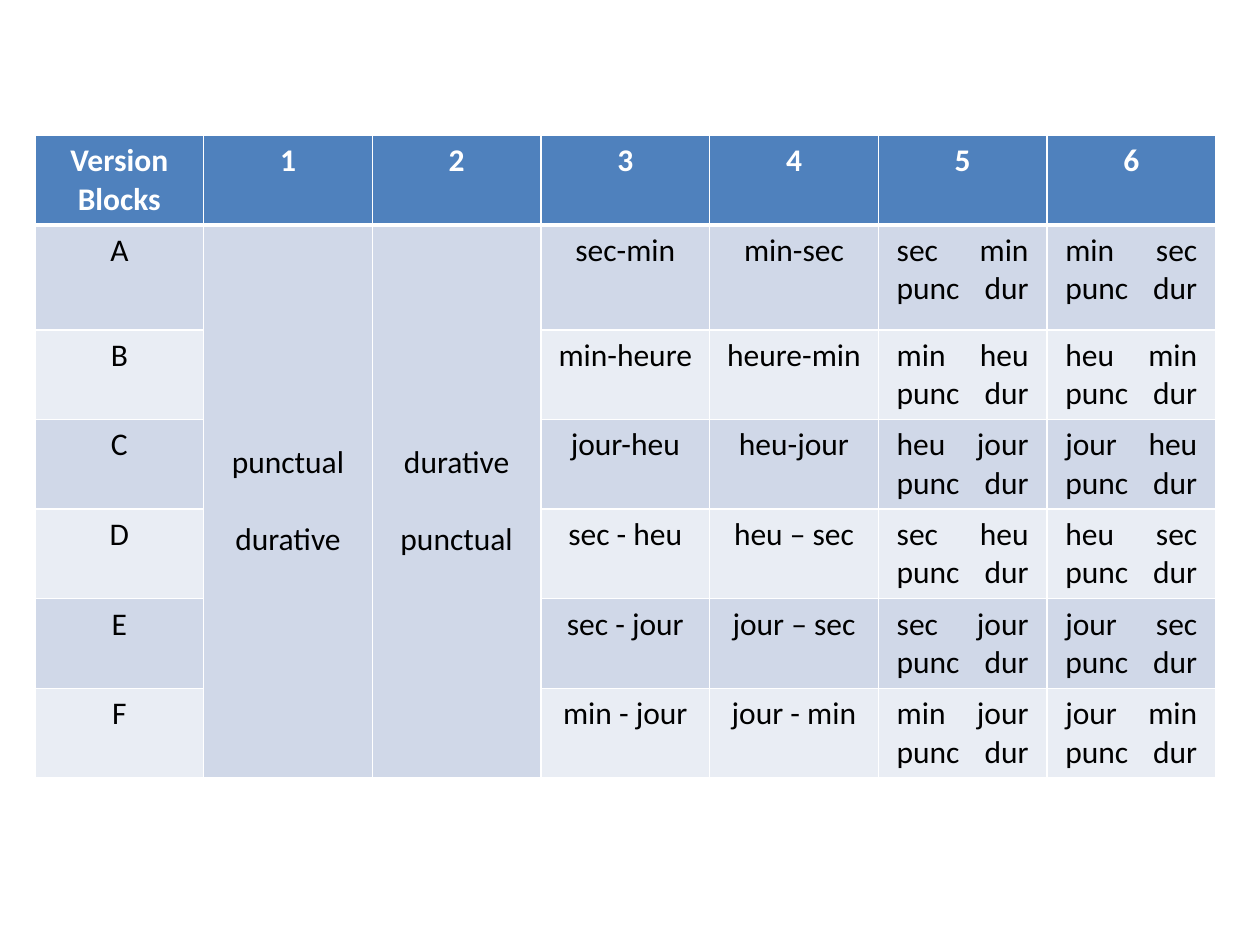
from dataclasses import dataclass

from lxml.etree import SubElement
from pptx import Presentation
from pptx.dml.color import RGBColor as Rgb
from pptx.enum.text import MSO_ANCHOR as Anchor, PP_ALIGN as Align
from pptx.oxml.ns import qn
from pptx.util import Pt


@dataclass(frozen=True)
class Theme:
    font: str = "Calibri"
    size: float = 18
    white: str = "FFFFFF"
    black: str = "000000"
    header: str = "4F81BD"
    bands: tuple = ("D0D8E8", "E9EDF4")
    rule: float = 1
    header_rule: float = 3


THEME = Theme()

VERSIONS = ["Version\vBlocks", "1", "2", "3", "4", "5", "6"]
ORDERS = ["punctual\ndurative", "durative\npunctual"]
BLOCKS = [
    ("A", "sec-min", "min-sec", "sec\tmin", "min\tsec"),
    ("B", "min-heure", "heure-min", "min\theu", "heu\tmin"),
    ("C", "jour-heu", "heu-jour", "heu\tjour", "jour\theu"),
    ("D", "sec - heu", "heu – sec", "sec\theu", "heu\tsec"),
    ("E", "sec - jour", "jour – sec", "sec\tjour", "jour\tsec"),
    ("F", "min - jour", "jour - min", "min\tjour", "jour\tmin"),
]
ASPECTS = "punc\tdur"


def rule_cell(cell, top, bottom):
    properties = cell._tc.get_or_add_tcPr()
    for side, width in zip("LRTB", (THEME.rule, THEME.rule, top, bottom)):
        line = SubElement(properties, qn(f"a:ln{side}"), w=str(Pt(width)))
        SubElement(SubElement(line, qn("a:solidFill")), qn("a:srgbClr"), val=THEME.white)


def paint_cell(cell, fill, top=THEME.rule, bottom=THEME.rule):
    rule_cell(cell, top, bottom)
    cell.fill.solid()
    cell.fill.fore_color.rgb = Rgb.from_string(fill)


def write_cell(cell, text, color=THEME.black, bold=False, align=Align.CENTER):
    cell.text_frame.text = text
    for paragraph in cell.text_frame.paragraphs:
        paragraph.alignment = align
        for run in paragraph.runs:
            run.font.name = THEME.font
            run.font.size = Pt(THEME.size)
            run.font.bold = bold
            run.font.color.rgb = Rgb.from_string(color)


def write_pair(cell, units, column_width):
    inset = 10.5
    cell.margin_left = cell.margin_right = Pt(inset)
    write_cell(cell, f"{units}\n{ASPECTS}", align=Align.LEFT)
    for paragraph in cell.text_frame.paragraphs:
        stops = SubElement(paragraph._p.get_or_add_pPr(), qn("a:tabLst"))
        SubElement(stops, qn("a:tab"), pos=str(Pt(column_width - 2 * inset)), algn="r")


def write_order(table, column, order):
    cell = table.cell(1, column)
    cell.merge(table.cell(len(BLOCKS), column))
    cell.vertical_anchor = Anchor.MIDDLE
    write_cell(cell, order)
    cell.text_frame.paragraphs[1].space_before = Pt(22)


def add_version_table(slide, left, top, width, height):
    first_block_height = 60
    column_width = width / len(VERSIONS)
    row_height = (height - first_block_height) / len(BLOCKS)
    table = slide.shapes.add_table(
        len(BLOCKS) + 1, len(VERSIONS), Pt(left), Pt(top), Pt(width), Pt(height)
    ).table
    for column in table.columns:
        column.width = Pt(column_width)
    for index, row in enumerate(table.rows):
        row.height = Pt(first_block_height if index == 1 else row_height)

    for column, version in enumerate(VERSIONS):
        cell = table.cell(0, column)
        paint_cell(cell, THEME.header, bottom=THEME.header_rule)
        write_cell(cell, version, THEME.white, bold=True)

    for row, (block, forward, backward, *pairs) in enumerate(BLOCKS, 1):
        for column in range(len(VERSIONS)):
            paint_cell(
                table.cell(row, column),
                THEME.bands[(row - 1) % 2],
                top=THEME.header_rule if row == 1 else THEME.rule,
            )
        for column, text in zip((0, 3, 4), (block, forward, backward)):
            write_cell(table.cell(row, column), text)
        for column, units in enumerate(pairs, 5):
            write_pair(table.cell(row, column), units, column_width)

    for column, order in enumerate(ORDERS, 1):
        write_order(table, column, order)


def main():
    deck = Presentation()
    deck.slide_width, deck.slide_height = Pt(720), Pt(540)
    slide = deck.slides.add_slide(deck.slide_layouts[6])
    add_version_table(slide, 20, 77.5, 674.8, 366)
    deck.save("out.pptx")


if __name__ == "__main__":
    main()
